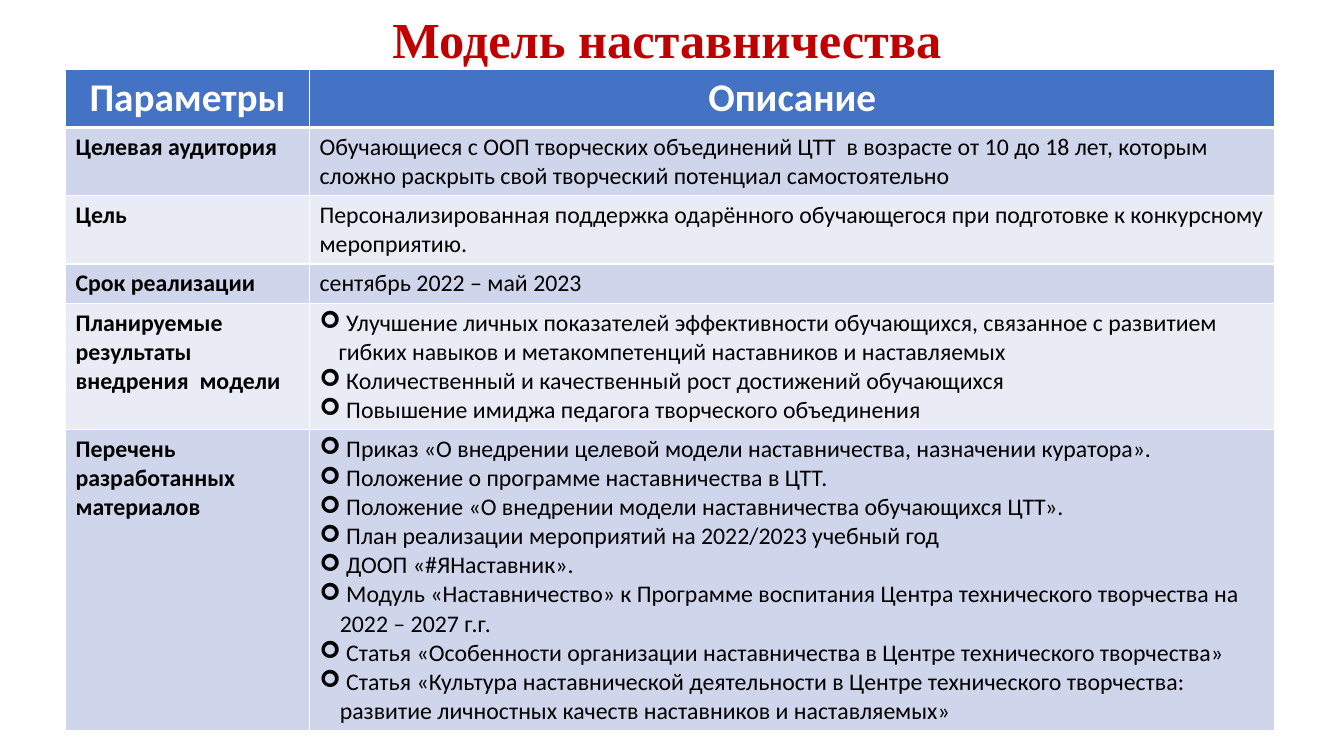
"""Builds the slide that describes the mentoring model."""
from dataclasses import dataclass

from lxml.etree import SubElement
from pptx import Presentation
from pptx.dml.color import RGBColor
from pptx.enum.text import MSO_ANCHOR, PP_ALIGN
from pptx.oxml.ns import qn
from pptx.util import Cm, Pt

WHITE = "FFFFFF"
HEADER_BLUE = "4472C4"
BANDS = ("CFD5EA", "E9EBF5")
BORDER_SIDES = ("lnL", "lnR", "lnT", "lnB")


@dataclass
class Parameter:
    name: str
    description: list[str]
    height: float
    hanging: float = 0


PARAMETERS = [
    Parameter("Целевая аудитория", [
        "Обучающиеся с ООП творческих объединений ЦТТ  в возрасте от 10 до 18 лет, "
        "которым сложно раскрыть свой творческий потенциал самостоятельно",
    ], 1.72),
    Parameter("Цель", [
        "Персонализированная поддержка одарённого обучающегося при подготовке "
        "к конкурсному мероприятию.",
    ], 1.72),
    Parameter("Срок реализации", ["сентябрь 2022 – май 2023"], 0.98),
    Parameter("Планируемые  результаты внедрения  модели", [
        " Улучшение личных показателей эффективности обучающихся, связанное с развитием "
        "гибких навыков и метакомпетенций наставников и наставляемых",
        " Количественный и качественный рост достижений обучающихся",
        " Повышение имиджа педагога творческого объединения",
    ], 3.18, 0.48),
    Parameter("Перечень разработанных материалов", [
        " Приказ «О внедрении целевой модели наставничества, назначении куратора».",
        " Положение о программе наставничества в ЦТТ.",
        " Положение «О внедрении модели наставничества обучающихся ЦТТ».",
        " План реализации мероприятий на 2022/2023 учебный год",
        " ДООП «#ЯНаставник».",
        " Модуль «Наставничество» к Программе воспитания Центра технического творчества "
        "на 2022 – 2027 г.г.",
        " Статья «Особенности организации наставничества в Центре технического творчества»",
        " Статья «Культура наставнической деятельности в Центре технического творчества: "
        "развитие личностных качеств наставников и наставляемых»",
    ], 7.55, 0.51),
]


def color(value: str) -> RGBColor:
    return RGBColor.from_string(value)


def set_font(paragraph, name: str, size: float, ink: str, bold: bool) -> None:
    font = paragraph.font
    font.name, font.size, font.bold = name, Pt(size), bold
    font.color.rgb = color(ink)


def add_bullet(paragraph, hanging: float) -> None:
    properties = paragraph._p.get_or_add_pPr()
    properties.set("marL", str(Cm(hanging)))
    properties.set("indent", str(-Cm(hanging)))
    SubElement(properties, qn("a:buFont"), typeface="Wingdings")
    SubElement(properties, qn("a:buChar"), char="➢")


def add_borders(cell, bottom: float) -> None:
    properties = cell._tc.get_or_add_tcPr()
    for side in BORDER_SIDES:
        width = Pt(bottom if side == "lnB" else 1)
        line = SubElement(properties, qn(f"a:{side}"), w=str(width))
        SubElement(SubElement(line, qn("a:solidFill")), qn("a:srgbClr"), val=WHITE)


def fill_cell(cell, lines: list[str], background: str, size: float = 17, ink: str = "000000",
              bold: bool = False, align: PP_ALIGN = PP_ALIGN.LEFT, hanging: float = 0,
              bottom: float = 1) -> None:
    add_borders(cell, bottom)
    cell.fill.solid()
    cell.fill.fore_color.rgb = color(background)
    cell.text = "\n".join(lines)
    for paragraph in cell.text_frame.paragraphs:
        paragraph.alignment = align
        if hanging:
            add_bullet(paragraph, hanging)
        set_font(paragraph, "Calibri", size, ink, bold)


def add_model_table(slide) -> None:
    table = slide.shapes.add_table(
        len(PARAMETERS) + 1, 2, Cm(1.65), Cm(1.75), Cm(30.48), Cm(16.6)).table
    table.columns[0].width, table.columns[1].width = Cm(6.15), Cm(24.33)
    table.rows[0].height = Cm(1.44)
    for column, heading in enumerate(("Параметры", "Описание")):
        fill_cell(table.cell(0, column), [heading], HEADER_BLUE, 28, WHITE, True,
                  PP_ALIGN.CENTER, bottom=3)
    for row, parameter in enumerate(PARAMETERS, start=1):
        band = BANDS[(row - 1) % 2]
        table.rows[row].height = Cm(parameter.height)
        fill_cell(table.cell(row, 0), [parameter.name], band, bold=True)
        fill_cell(table.cell(row, 1), parameter.description, band, hanging=parameter.hanging)


def add_title(slide) -> None:
    title = slide.shapes.add_textbox(Cm(3.86), Cm(0.2), Cm(25.9), Cm(1.73)).text_frame
    title.word_wrap = True
    title.vertical_anchor = MSO_ANCHOR.MIDDLE
    title.text = "Модель наставничества"
    heading = title.paragraphs[0]
    heading.alignment = PP_ALIGN.CENTER
    heading.line_spacing = 0.9
    set_font(heading, "Times New Roman", 36, "C00000", True)


def main() -> None:
    deck = Presentation()
    deck.slide_width, deck.slide_height = Cm(33.87), Cm(19.05)
    slide = deck.slides.add_slide(deck.slide_layouts[6])
    add_model_table(slide)
    add_title(slide)
    deck.save("out.pptx")


if __name__ == "__main__":
    main()
